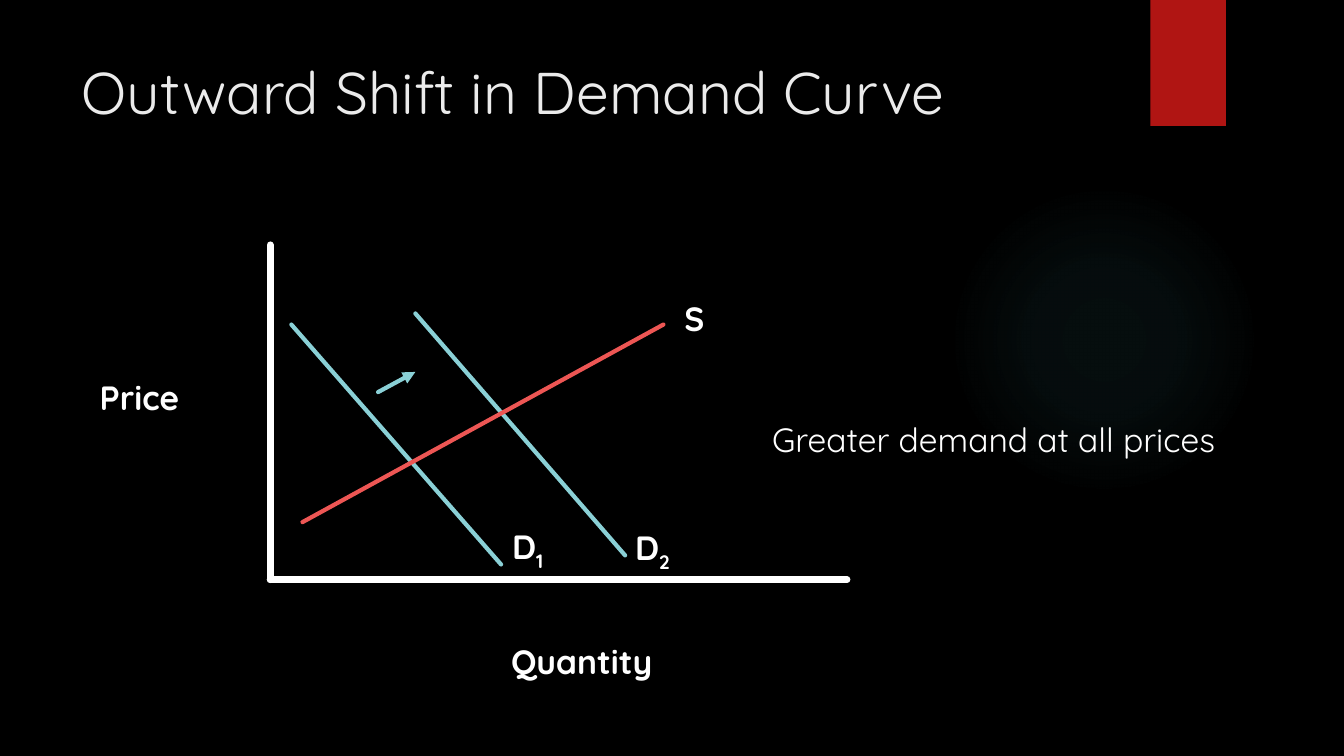
from lxml import etree
from pptx import Presentation
from pptx import util as u
from pptx.dml.color import RGBColor
from pptx.enum import shapes, text
from pptx.oxml import parse_xml
from pptx.oxml.ns import nsdecls, qn


class Theme:
    """Colours, font and type sizes."""
    font = "Quicksand"
    back, white, pale = "000000", "FFFFFF", "EBEBEB"
    red, rose, aqua, glow = "B01513", "ED5654", "8AD0D6", "50B9C1"
    head, body = 42, 24
    axis, curve = 5, 3


class Deck:
    """Draws styled elements on the current slide."""

    def __init__(self, theme):
        """Open a blank dark slide."""
        self.theme = theme
        self.prs = Presentation()
        self.prs.slide_width = u.Inches(13.33)
        self.prs.slide_height = u.Inches(7.5)
        self.slide = self.prs.slides.add_slide(self.prs.slide_layouts[5])
        fill = self.slide.background.fill
        fill.solid()
        fill.fore_color.rgb = RGBColor.from_string(theme.back)

    def shape(self, kind, box):
        """Add a preset shape without outline or shadow."""
        item = self.slide.shapes.add_shape(kind, *map(u.Inches, box))
        item.line.fill.background()
        item.shadow.inherit = False
        return item

    def block(self, box, color):
        """Add a plain filled rectangle."""
        fill = self.shape(shapes.MSO_SHAPE.RECTANGLE, box).fill
        fill.solid()
        fill.fore_color.rgb = RGBColor.from_string(color)

    def glow(self, box, color, stops):
        """Add a circle whose tint fades outward through the stops."""
        item = self.shape(shapes.MSO_SHAPE.OVAL, box)
        marks = "".join(
            f'<a:gs pos="{pos * 1000}"><a:srgbClr val="{color}">'
            f'<a:alpha val="{alpha * 1000}"/></a:srgbClr></a:gs>'
            for pos, alpha in stops)
        grad = parse_xml(
            f'<a:gradFill {nsdecls("a")} rotWithShape="1"><a:gsLst>{marks}</a:gsLst>'
            '<a:path path="circle"><a:fillToRect l="50000" t="50000" r="50000" b="50000"/>'
            '</a:path></a:gradFill>')
        item._element.spPr.find(qn("a:prstGeom")).addnext(grad)

    def style(self, frame, size, color, bold=False):
        """Format every run of a text frame."""
        frame.word_wrap = True
        frame.vertical_anchor = text.MSO_ANCHOR.TOP
        for para in frame.paragraphs:
            para.alignment = text.PP_ALIGN.LEFT
            for run in para.runs:
                font = run.font
                font.name, font.size, font.bold = self.theme.font, u.Pt(size), bold
                font.color.rgb = RGBColor.from_string(color)

    def title(self, words, box):
        """Fill and place the title placeholder."""
        item = self.slide.shapes.title
        item.left, item.top, item.width, item.height = map(u.Inches, box)
        item.text_frame.text = words
        self.style(item.text_frame, self.theme.head, self.theme.pale)

    def label(self, words, box, bold=True, sub=""):
        """Add a text box with an optional subscript."""
        frame = self.slide.shapes.add_textbox(*map(u.Inches, box)).text_frame
        frame.text = words
        if sub:
            run = frame.paragraphs[0].add_run()
            run.text = sub
            run._r.get_or_add_rPr().set("baseline", "-25000")
        self.style(frame, self.theme.body, self.theme.white, bold)

    def line(self, start, end, color, width, arrow=False):
        """Add a straight line with round caps."""
        item = self.slide.shapes.add_connector(
            shapes.MSO_CONNECTOR.STRAIGHT, *map(u.Inches, start + end))
        item.line.color.rgb = RGBColor.from_string(color)
        item.line.width = u.Pt(width)
        edge = item.line._get_or_add_ln()
        edge.set("cap", "rnd")
        if arrow:
            etree.SubElement(edge, qn("a:tailEnd"), type="triangle")
        etree.SubElement(item._element.spPr, qn("a:effectLst"))


def main():
    """Build the demand shift slide."""
    look = Theme()
    deck = Deck(look)
    deck.glow((9.41, 1.83, 3.08, 3.08), look.glow, [(0, 7), (36, 6), (69, 0)])
    deck.block((11.41, 0, 0.75, 1.25), look.red)
    deck.title("Outward Shift in Demand Curve", (0.71, 0.5, 10.29, 1.53))

    root = (2.68, 5.75)
    for end in ((2.68, 2.43), (8.4, 5.75)):
        deck.line(root, end, look.white, look.axis)
    deck.label("Price", (0.89, 3.69, 1.29, 0.5))
    deck.label("Quantity", (4.97, 6.31, 2.89, 0.5))

    deck.line((2.89, 3.22), (4.97, 5.6), look.aqua, look.curve)
    deck.line((4.12, 3.11), (6.2, 5.51), look.aqua, look.curve)
    deck.line((3, 5.18), (6.58, 3.22), look.rose, look.curve)
    deck.line((3.75, 3.89), (4.12, 3.69), look.aqua, look.curve, arrow=True)
    deck.label("D", (6.2, 5.18, 0.69, 0.5), sub="2")
    deck.label("D", (4.98, 5.17, 0.89, 0.5), sub="1")
    deck.label("S", (6.69, 2.91, 0.83, 0.5))
    deck.label("Greater demand at all prices", (7.56, 4.11, 5.07, 0.5), bold=False)
    deck.prs.save("out.pptx")


if __name__ == "__main__":
    main()
